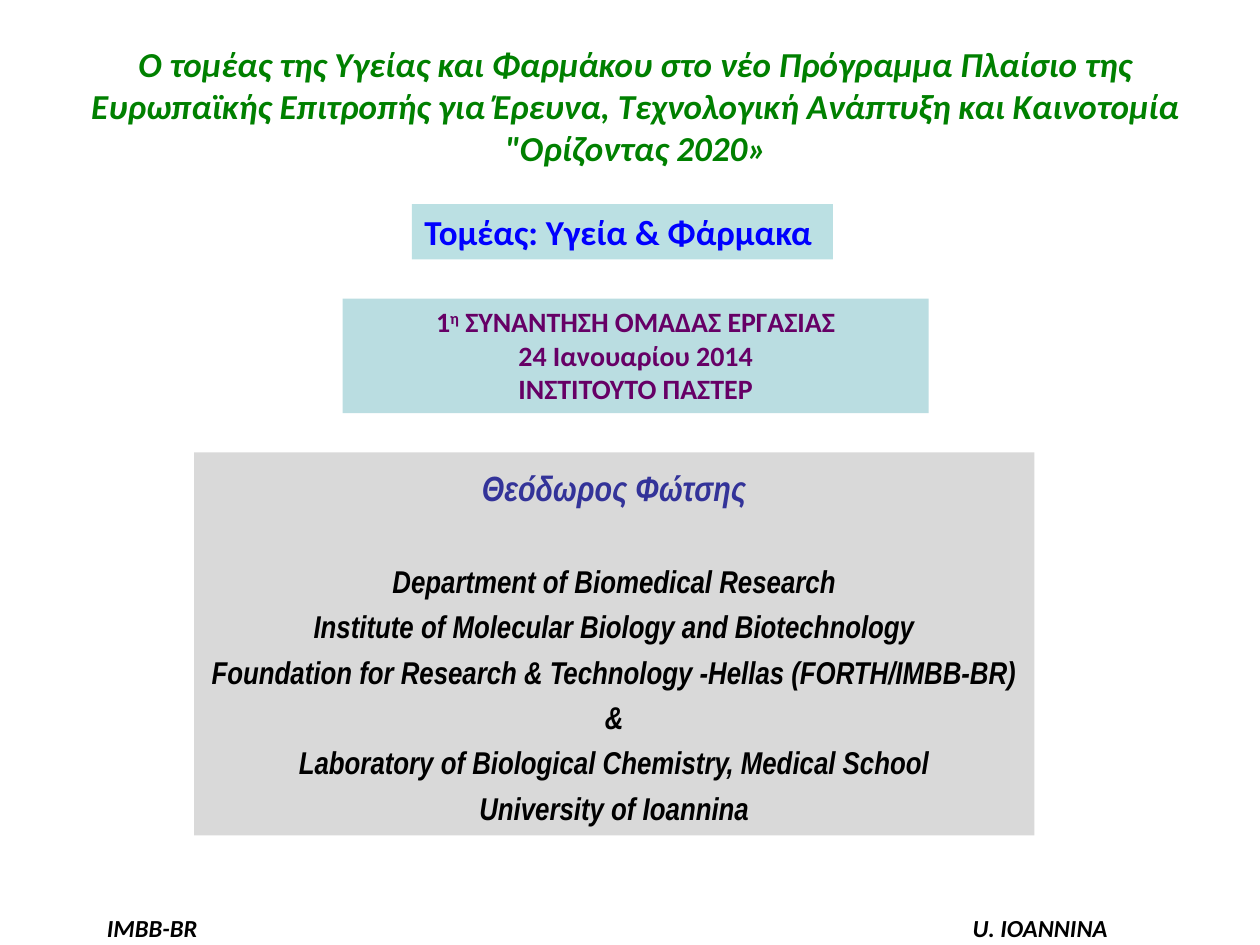
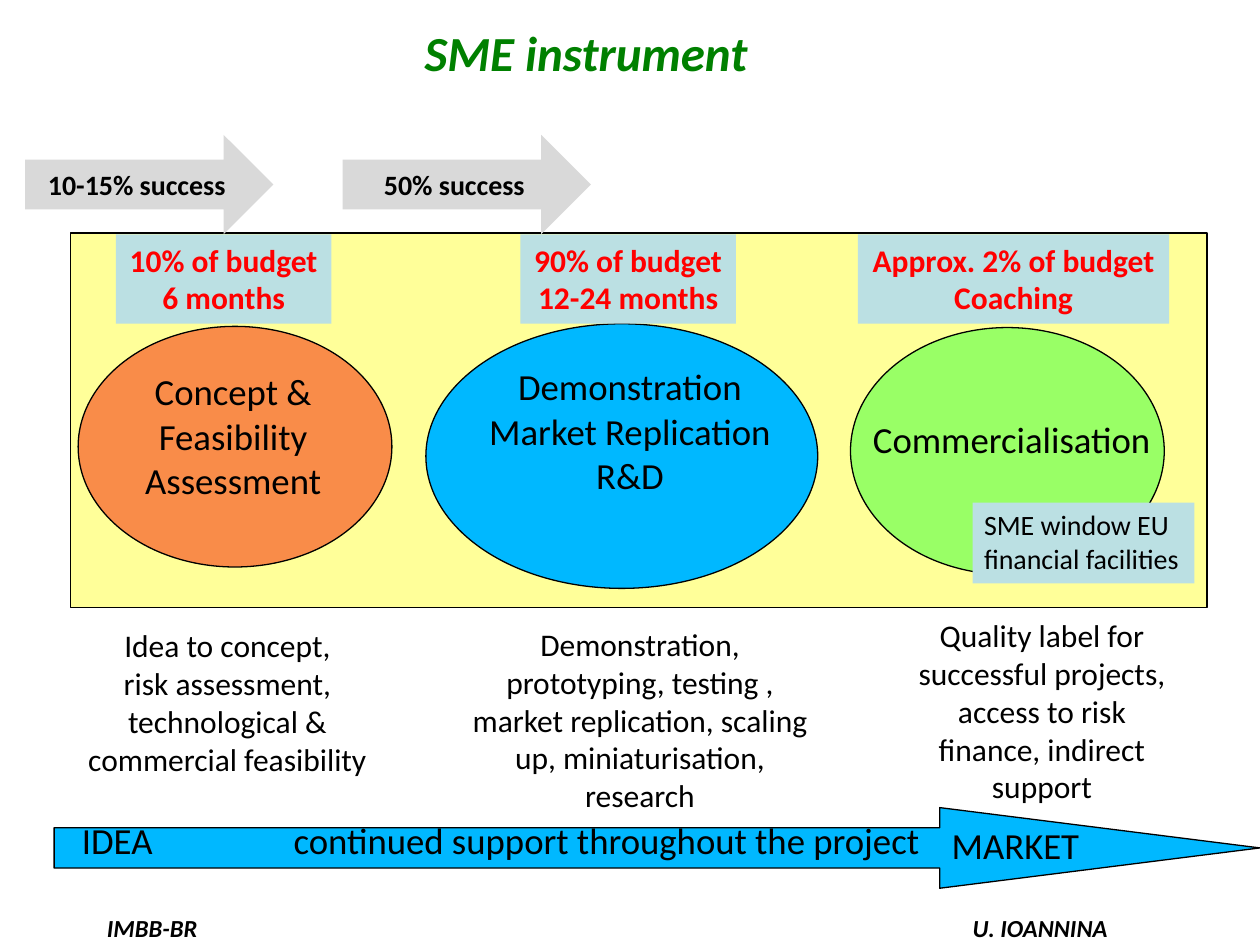
from dataclasses import dataclass
from typing import NamedTuple

from lxml.etree import SubElement
from pptx import Presentation
from pptx.dml.color import RGBColor
from pptx.enum.shapes import MSO_SHAPE
from pptx.enum.text import MSO_ANCHOR, MSO_AUTO_SIZE, PP_ALIGN
from pptx.oxml.ns import qn
from pptx.shapes.autoshape import Shape
from pptx.slide import Slide
from pptx.util import Inches, Pt

SLIDE_WIDTH, SLIDE_HEIGHT = Inches(10), Inches(7.5)
COLUMN, ROW = SLIDE_WIDTH / 100, SLIDE_HEIGHT / 75

BLACK = RGBColor(0x00, 0x00, 0x00)
GREEN = RGBColor(0x00, 0x80, 0x00)
BLUE = RGBColor(0x00, 0x00, 0xFF)
INDIGO = RGBColor(0x33, 0x33, 0x99)
PURPLE = RGBColor(0x66, 0x00, 0x66)
RED = RGBColor(0xFF, 0x00, 0x00)
GREY = RGBColor(0xD9, 0xD9, 0xD9)
PALE_TEAL = RGBColor(0xBB, 0xE0, 0xE3)
DULL_TEAL = RGBColor(0xBA, 0xDD, 0xE1)
PALE_YELLOW = RGBColor(0xFF, 0xFF, 0x99)
ORANGE = RGBColor(0xF9, 0x8C, 0x49)
SKY = RGBColor(0x00, 0xB8, 0xFF)
LIME = RGBColor(0x99, 0xFF, 0x66)

TIGHT_INSETS = (0.09, 0.04)
NORMAL_INSETS = (0.1, 0.05)


class Area(NamedTuple):
    """Left, top, width and height in grid columns and rows."""
    left: float
    top: float
    width: float
    height: float


class Style(NamedTuple):
    size: float
    color: RGBColor = BLACK
    bold: bool = False
    italic: bool = False
    align: PP_ALIGN = PP_ALIGN.CENTER
    font: str = "Calibri"
    line_spacing: float = 1.0


FOOTER = Style(14, bold=True, italic=True, align=PP_ALIGN.LEFT)
STAGE_NAME = Style(21)
DESCRIPTION = Style(18)
BUDGET = Style(18, RED, bold=True)
SUCCESS = Style(16, bold=True)
SPEAKER = Style(20, INDIGO, True, True, font="Arial Narrow", line_spacing=1.2)
AFFILIATION = SPEAKER._replace(size=18, color=BLACK)


@dataclass
class Stage:
    color: RGBColor
    ellipse: Area
    name: list[str]
    name_area: Area
    budget: list[str]
    budget_area: Area
    description: list[str]
    description_area: Area


STAGES = [
    Stage(ORANGE, Area(6.2, 25.9, 24.9, 19.1),
          ["Concept & Feasibility Assessment"], Area(9.4, 28.9, 18.2, 11.9),
          ["10% of budget", "6 months"], Area(9.2, 18.6, 17.1, 7.1),
          ["Idea to concept,",
           "risk assessment, technological & commercial feasibility"],
          Area(4.6, 49.3, 26.9, 13)),
    Stage(SKY, Area(33.8, 25.7, 31.1, 21),
          ["Demonstration", "Market Replication", "R&D"],
          Area(37.2, 28.5, 25.6, 11.9),
          ["90% of budget", "12-24 months"], Area(41.3, 18.6, 17.1, 7.1),
          ["Demonstration, prototyping, testing , market replication, "
           "scaling up, miniaturisation, research"],
          Area(35.6, 49.2, 30.4, 16)),
    Stage(LIME, Area(67.5, 26, 24.9, 19.6),
          ["Commercialisation"], Area(66.5, 32.7, 27.6, 4.5),
          ["Approx. 2% of budget", "Coaching"], Area(68.1, 18.6, 24.7, 7.1),
          ["Quality label for successful projects, access to risk finance, "
           "indirect support"],
          Area(70.9, 48.5, 23.6, 16)),
]


def place(area: Area) -> tuple[int, int, int, int]:
    """Turn grid cells into slide lengths."""
    return (round(area.left * COLUMN), round(area.top * ROW),
            round(area.width * COLUMN), round(area.height * ROW))


def write(shape: Shape, lines: list[str], style: Style, wrap: bool = True,
          insets: tuple[float, float] = NORMAL_INSETS,
          anchor: MSO_ANCHOR = MSO_ANCHOR.TOP) -> None:
    """Write one paragraph per line; text between ^ marks is superscript."""
    frame = shape.text_frame
    frame.auto_size = MSO_AUTO_SIZE.NONE
    frame.word_wrap = wrap
    frame.vertical_anchor = anchor
    frame.margin_left = frame.margin_right = Inches(insets[0])
    frame.margin_top = frame.margin_bottom = Inches(insets[1])
    for index, line in enumerate(lines):
        paragraph = frame.add_paragraph() if index else frame.paragraphs[0]
        for part, words in enumerate(line.split("^")):
            run = paragraph.add_run()
            run.text = words
            if part % 2:
                run._r.get_or_add_rPr().set("baseline", "30000")
        format_paragraph(paragraph, style)


def format_paragraph(paragraph, style: Style) -> None:
    paragraph.alignment = style.align
    paragraph.line_spacing = style.line_spacing
    font = paragraph.font
    font.name, font.size = style.font, Pt(style.size)
    font.bold, font.italic = style.bold, style.italic
    font.color.rgb = style.color


def add_text(slide: Slide, area: Area, lines: list[str], style: Style,
             wrap: bool = True,
             insets: tuple[float, float] = TIGHT_INSETS) -> Shape:
    label = slide.shapes.add_textbox(*place(area))
    write(label, lines, style, wrap, insets)
    return label


def add_block(slide: Slide, kind: MSO_SHAPE, area: Area, fill: RGBColor,
              outlined: bool = False) -> Shape:
    block = slide.shapes.add_shape(kind, *place(area))
    block.shadow.inherit = False
    block.fill.solid()
    block.fill.fore_color.rgb = fill
    if outlined:
        block.line.color.rgb = BLACK
        block.line.width = Pt(0.75)
    else:
        block.line.fill.background()
    return block


def add_arrow(slide: Slide, area: Area, fill: RGBColor, head: float,
              outlined: bool = False) -> Shape:
    """Right arrow whose head length is a multiple of its height."""
    arrow = add_block(slide, MSO_SHAPE.RIGHT_ARROW, area, fill, outlined)
    arrow.adjustments[0], arrow.adjustments[1] = 0.5, head
    return arrow


def add_titled_slide(deck: Presentation, title: str, area: Area, style: Style,
                     wrap: bool = True) -> Slide:
    """Title-only slide with the two footers."""
    slide = deck.slides.add_slide(deck.slide_layouts[5])
    heading = slide.shapes.title
    heading.left, heading.top, heading.width, heading.height = place(area)
    write(heading, [title], style, wrap)
    add_text(slide, Area(7.5, 72, 9.4, 3.4), ["IMBB-BR"], FOOTER, False,
             NORMAL_INSETS)
    add_text(slide, Area(76.2, 72, 13.9, 3.4), ["U. IOANNINA"], FOOTER, True,
             NORMAL_INSETS)
    return slide


def build_opening(deck: Presentation) -> None:
    slide = add_titled_slide(
        deck,
        "Ο τομέας της Υγείας και Φαρμάκου στο νέο Πρόγραμμα Πλαίσιο της "
        "Ευρωπαϊκής Επιτροπής για Έρευνα, Τεχνολογική Ανάπτυξη και Καινοτομία "
        "\"Ορίζοντας 2020»",
        Area(5.9, 2.9, 89.1, 11.1), Style(20, GREEN, True, True))

    speaker = add_block(slide, MSO_SHAPE.RECTANGLE,
                        Area(15.4, 35.9, 66.7, 30.4), GREY)
    write(speaker, ["Θεόδωρος Φώτσης"], SPEAKER)
    affiliations = [
        "Department of Biomedical Research",
        "Institute of Molecular Biology and Biotechnology",
        "Foundation for Research & Technology -Hellas (FORTH/IMBB-BR)",
        "&",
        "Laboratory of Biological Chemistry, Medical School",
        "University of Ioannina",
    ]
    for index, affiliation in enumerate(affiliations):
        paragraph = speaker.text_frame.add_paragraph()
        paragraph.text = affiliation
        paragraph.space_before = Pt(0 if index else 26)
        format_paragraph(paragraph, AFFILIATION)

    meeting = add_block(slide, MSO_SHAPE.RECTANGLE,
                        Area(27.2, 23.7, 46.5, 9.1), DULL_TEAL)
    write(meeting, ["1^η^ ΣΥΝΑΝΤΗΣΗ ΟΜΑΔΑΣ ΕΡΓΑΣΙΑΣ", "24 Ιανουαρίου 2014",
                    "ΙΝΣΤΙΤΟΥΤΟ ΠΑΣΤΕΡ"], Style(16, PURPLE, bold=True))

    sector = add_block(slide, MSO_SHAPE.RECTANGLE,
                       Area(32.7, 16.2, 33.4, 4.4), PALE_TEAL)
    write(sector, ["Τομέας: Υγεία & Φάρμακα"],
          Style(20, BLUE, bold=True, align=PP_ALIGN.LEFT))


def add_support_arrow(slide: Slide) -> None:
    add_arrow(slide, Area(4.3, 64.1, 95.7, 6.4), SKY, 3.97, outlined=True)
    support = slide.shapes.add_textbox(*place(Area(5.6, 64.5, 68.9, 4.5)))
    properties = support.text_frame.paragraphs[0]._p.get_or_add_pPr()
    tabs = SubElement(properties, qn("a:tabLst"))
    SubElement(tabs, qn("a:tab"), pos=str(Inches(1.68)), algn="l")
    write(support, ["IDEA\tcontinued support throughout the project"],
          STAGE_NAME._replace(align=PP_ALIGN.LEFT), insets=TIGHT_INSETS)
    add_text(slide, Area(73.6, 64.9, 14, 4.5), ["MARKET"], STAGE_NAME)


def build_instrument(deck: Presentation) -> None:
    slide = add_titled_slide(
        deck, "SME instrument", Area(32.7, 1.3, 29, 5.7),
        Style(28, GREEN, True, True, PP_ALIGN.LEFT), wrap=False)

    add_support_arrow(slide)
    add_block(slide, MSO_SHAPE.RECTANGLE, Area(5.6, 18.5, 90.2, 29.7),
              PALE_YELLOW, outlined=True)
    for stage in STAGES:
        add_block(slide, MSO_SHAPE.OVAL, stage.ellipse, stage.color,
                  outlined=True)
        add_text(slide, stage.name_area, stage.name, STAGE_NAME)
        add_text(slide, stage.description_area, stage.description, DESCRIPTION)

    window = add_block(slide, MSO_SHAPE.RECTANGLE,
                       Area(77.2, 39.9, 17.6, 6.4), PALE_TEAL)
    write(window, ["SME window EU financial facilities"],
          Style(16, align=PP_ALIGN.LEFT), insets=TIGHT_INSETS)

    for left, rate in ((2, "10-15% success"), (27.2, "50% success")):
        arrow = add_arrow(slide, Area(left, 10.7, 19.7, 7.9), GREY, 0.5)
        write(arrow, [rate], SUCCESS, anchor=MSO_ANCHOR.MIDDLE)

    for stage in STAGES:
        budget = add_block(slide, MSO_SHAPE.RECTANGLE, stage.budget_area,
                           PALE_TEAL)
        write(budget, stage.budget, BUDGET, wrap=False)


def main() -> None:
    deck = Presentation()
    deck.slide_width, deck.slide_height = SLIDE_WIDTH, SLIDE_HEIGHT
    build_opening(deck)
    build_instrument(deck)
    deck.save("out.pptx")


if __name__ == "__main__":
    main()
